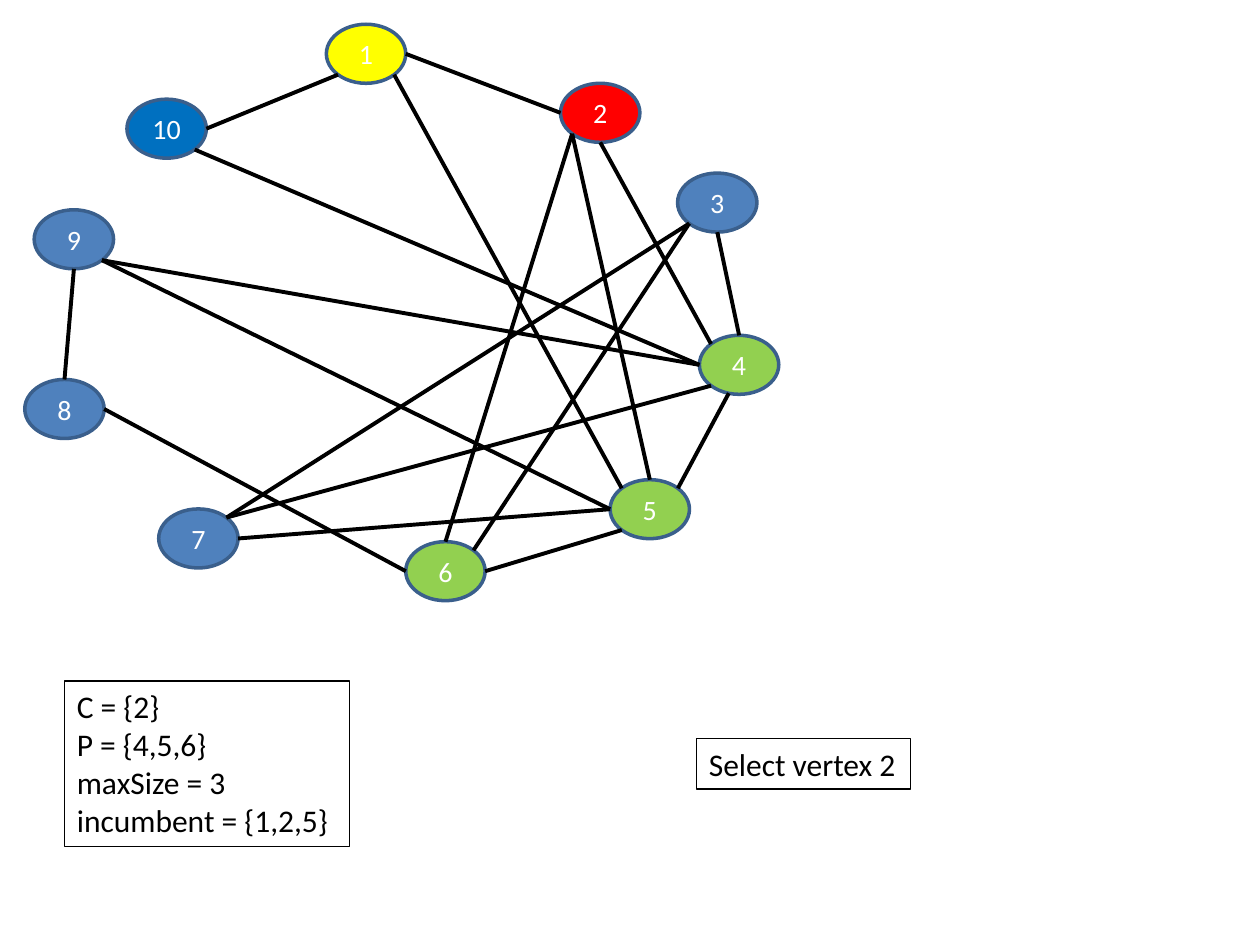
from math import sqrt

from lxml.etree import SubElement
from pptx import Presentation
from pptx.dml.color import RGBColor
from pptx.enum.shapes import MSO_CONNECTOR, MSO_SHAPE
from pptx.enum.text import MSO_ANCHOR, MSO_AUTO_SIZE, PP_ALIGN
from pptx.oxml.ns import qn
from pptx.util import Cm, Pt

BLACK = RGBColor(0x00, 0x00, 0x00)
WHITE = RGBColor(0xFF, 0xFF, 0xFF)
OUTLINE = RGBColor(0x3A, 0x5F, 0x8C)
STEEL = RGBColor(0x4F, 0x81, 0xBD)
BLUE = RGBColor(0x00, 0x70, 0xC0)
GREEN = RGBColor(0x92, 0xD0, 0x50)
YELLOW = RGBColor(0xFF, 0xFF, 0x00)
RED = RGBColor(0xFF, 0x00, 0x00)

VERTEX_WIDTH = 1.6
VERTEX_HEIGHT = 1.19
NEAR = (1 - sqrt(0.5)) / 2
FAR = 1 - NEAR

SITES = {
    "top": (0.5, 0),
    "top left": (NEAR, NEAR),
    "left": (0, 0.5),
    "bottom left": (NEAR, FAR),
    "bottom": (0.5, 1),
    "bottom right": (FAR, FAR),
    "right": (1, 0.5),
    "top right": (FAR, NEAR),
    "lower edge": (0.37, 0.98),
}

VERTICES = {
    6: (8.18, 10.92, GREEN),
    4: (14.1, 6.76, GREEN),
    9: (0.69, 4.23, STEEL),
    10: (2.56, 2, BLUE),
    1: (6.58, 0.49, YELLOW),
    5: (12.3, 9.67, GREEN),
    3: (13.66, 3.49, STEEL),
    2: (11.3, 1.68, RED),
    7: (3.2, 10.26, STEEL),
    8: (0.5, 7.65, STEEL),
}

EDGES = [
    (1, "right", 2, "left"),
    (1, "bottom right", 5, "top left"),
    (10, "right", 1, "bottom left"),
    (2, "bottom", 4, "top left"),
    (8, "top", 9, "bottom"),
    (5, "top", 2, "bottom left"),
    (2, "bottom left", 6, "top"),
    (4, "top", 3, "bottom"),
    (3, "bottom left", 6, "top right"),
    (3, "bottom left", 7, "top right"),
    (5, "top right", 4, "lower edge"),
    (7, "top right", 4, "bottom left"),
    (9, "bottom right", 4, "left"),
    (10, "bottom right", 4, "left"),
    (6, "right", 5, "bottom left"),
    (7, "right", 5, "left"),
    (9, "bottom right", 5, "left"),
    (6, "left", 8, "right"),
]


def write_text(paragraph, text, size=18, color=BLACK, align=PP_ALIGN.LEFT):
    paragraph.alignment = align
    run = paragraph.add_run()
    run.text = text
    run.font.name = "Calibri"
    run.font.size = Pt(size)
    run.font.color.rgb = color


class GraphSlide:
    def __init__(self, slide):
        self.slide = slide

    def vertex(self, label, left, top, fill):
        shape = self.slide.shapes.add_shape(
            MSO_SHAPE.OVAL, Cm(left), Cm(top), Cm(VERTEX_WIDTH), Cm(VERTEX_HEIGHT))
        shape.shadow.inherit = False
        shape.fill.solid()
        shape.fill.fore_color.rgb = fill
        shape.line.color.rgb = OUTLINE
        shape.line.width = Pt(2)
        shape.text_frame.vertical_anchor = MSO_ANCHOR.MIDDLE
        write_text(shape.text_frame.paragraphs[0], str(label),
                   size=16, color=WHITE, align=PP_ALIGN.CENTER)

    def site(self, label, site):
        left, top, _ = VERTICES[label]
        across, down = SITES[site]
        return Cm(left + across * VERTEX_WIDTH), Cm(top + down * VERTEX_HEIGHT)

    def edge(self, start, start_site, end, end_site):
        connector = self.slide.shapes.add_connector(
            MSO_CONNECTOR.STRAIGHT,
            *self.site(start, start_site), *self.site(end, end_site))
        connector.line.color.rgb = BLACK
        connector.line.width = Pt(2.25)
        SubElement(connector.element.spPr, qn("a:effectLst"))

    def note(self, lines, left, top, width, height):
        box = self.slide.shapes.add_textbox(Cm(left), Cm(top), Cm(width), Cm(height))
        box.line.color.rgb = BLACK
        box.line.width = Pt(0.75)
        frame = box.text_frame
        frame.word_wrap = False
        frame.auto_size = MSO_AUTO_SIZE.SHAPE_TO_FIT_TEXT
        for index, line in enumerate(lines):
            paragraph = frame.add_paragraph() if index else frame.paragraphs[0]
            write_text(paragraph, line)


def main():
    presentation = Presentation()
    presentation.slide_width = Cm(25.4)
    presentation.slide_height = Cm(19.05)
    graph = GraphSlide(presentation.slides.add_slide(presentation.slide_layouts[6]))
    for label, (left, top, fill) in VERTICES.items():
        graph.vertex(label, left, top, fill)
    for edge in EDGES:
        graph.edge(*edge)
    graph.note(["C = {2}", "P = {4,5,6}", "maxSize = 3", "incumbent = {1,2,5}"],
               1.3, 13.73, 5.75, 3.33)
    graph.note(["Select vertex 2"], 14.04, 14.89, 4.32, 1.02)
    presentation.save("out.pptx")


if __name__ == "__main__":
    main()
